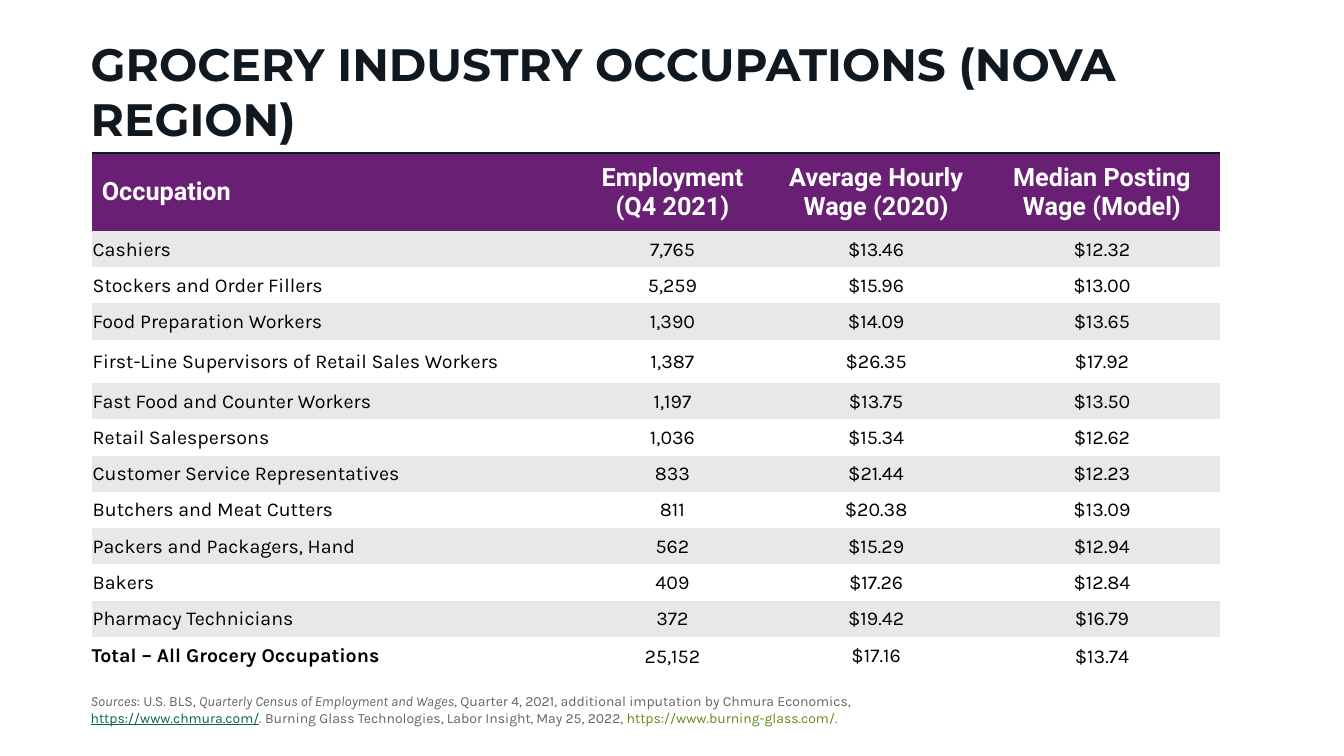
from lxml.etree import SubElement
from pptx import Presentation
from pptx.dml.color import RGBColor
from pptx.enum.text import MSO_ANCHOR, MSO_AUTO_SIZE, PP_ALIGN
from pptx.oxml.ns import qn
from pptx.util import Inches, Pt

NAVY = RGBColor(0x10, 0x18, 0x20)
PURPLE = RGBColor(0x69, 0x1F, 0x74)
BAND_GRAY = RGBColor(0xE7, 0xE8, 0xE8)
WHITE = RGBColor(0xFF, 0xFF, 0xFF)
BLACK = RGBColor(0x00, 0x00, 0x00)
SOURCE_GRAY = RGBColor(0x64, 0x65, 0x5C)
LINK_GREEN = RGBColor(0x04, 0x69, 0x38)
OLIVE = RGBColor(0x62, 0x8B, 0x1C)
NO_STYLE_NO_GRID = "{2D5ABB26-0587-4C30-8999-92F81FD0307C}"

OCCUPATIONS = [
    ("Occupation", "Employment\n(Q4 2021)", "Average Hourly Wage (2020)", "Median Posting Wage (Model)"),
    ("Cashiers", "7,765", "$13.46", "$12.32"),
    ("Stockers and Order Fillers", "5,259", "$15.96", "$13.00"),
    ("Food Preparation Workers", "1,390", "$14.09", "$13.65"),
    ("First-Line Supervisors of Retail Sales Workers", "1,387", "$26.35", "$17.92"),
    ("Fast Food and Counter Workers", "1,197", "$13.75", "$13.50"),
    ("Retail Salespersons", "1,036", "$15.34", "$12.62"),
    ("Customer Service Representatives", "833", "$21.44", "$12.23"),
    ("Butchers and Meat Cutters", "811", "$20.38", "$13.09"),
    ("Packers and Packagers, Hand", "562", "$15.29", "$12.94"),
    ("Bakers", "409", "$17.26", "$12.84"),
    ("Pharmacy Technicians", "372", "$19.42", "$16.79"),
    ("Total – All Grocery Occupations", "25,152", "$17.16", "$13.74"),
]
COLUMN_WIDTHS = [4.81, 1.9, 2.14, 2.34]
ROW_HEIGHTS = [0.77] + [0.36] * 3 + [0.43] + [0.36] * 7 + [0.38]
SOURCES = [
    ("Sources", {"italic": True}),
    (": U.S. BLS, ", {}),
    ("Quarterly Census of Employment and Wages", {"italic": True}),
    (", Quarter 4, 2021, additional imputation by Chmura Economics, ", {}),
    ("https://www.chmura.com/", {"color": LINK_GREEN, "underline": True}),
    (". Burning Glass Technologies, Labor Insight", {}),
    (", ", {"italic": True}),
    ("May 25, 2022, ", {}),
    ("https://www.burning-glass.com/.", {"color": OLIVE}),
]


def format_font(font, color, **values):
    font.color.rgb = color
    for name, value in values.items():
        setattr(font, name, value)


def add_top_border(cell, color, width):
    """Put the line ahead of the cell's fill, as the schema requires."""
    properties = cell._tc.get_or_add_tcPr()
    border = SubElement(properties, qn("a:lnT"), w=str(width))
    fill = SubElement(border, qn("a:solidFill"))
    SubElement(fill, qn("a:srgbClr"), val=str(color))
    properties.insert(0, border)


presentation = Presentation()
presentation.slide_width = Inches(13.33)
presentation.slide_height = Inches(7.5)
slide = presentation.slides.add_slide(presentation.slide_layouts[5])

# Title
title = slide.shapes.title
title.left, title.top, title.width, title.height = map(Inches, (0.8, 0.79, 10.6, 0.7))
title.text = "GROCERY INDUSTRY OCCUPATIONS (NOVA REGION)"
title.text_frame.word_wrap = True
title.text_frame.auto_size = MSO_AUTO_SIZE.NONE
title.text_frame.vertical_anchor = MSO_ANCHOR.BOTTOM
paragraph = title.text_frame.paragraphs[0]
paragraph.alignment = PP_ALIGN.LEFT
format_font(paragraph.font, NAVY, name="Montserrat", size=Pt(32.4), bold=True)

# Occupation table
table_frame = slide.shapes.add_table(
    len(OCCUPATIONS), len(COLUMN_WIDTHS), Inches(0.91), Inches(1.52),
    Inches(sum(COLUMN_WIDTHS)), Inches(sum(ROW_HEIGHTS)))
table = table_frame.table
table.horz_banding = False
table._tbl.tblPr.find(qn("a:tableStyleId")).text = NO_STYLE_NO_GRID
for column, width in zip(table.columns, COLUMN_WIDTHS):
    column.width = Inches(width)

last_row = len(OCCUPATIONS) - 1
for row_index, (values, height) in enumerate(zip(OCCUPATIONS, ROW_HEIGHTS)):
    table.rows[row_index].height = Inches(height)
    is_header = row_index == 0
    band = BAND_GRAY if row_index % 2 else WHITE
    for column_index, value in enumerate(values):
        cell = table.cell(row_index, column_index)
        cell.text = value
        cell.vertical_anchor = MSO_ANCHOR.MIDDLE
        cell.fill.solid()
        cell.fill.fore_color.rgb = PURPLE if is_header else band
        if is_header:
            add_top_border(cell, NAVY, Pt(2))
        if not (is_header and column_index == 0):
            inset = 0 if row_index == last_row and column_index in (0, 2) else 0.01
            cell.margin_left = cell.margin_right = cell.margin_top = Inches(inset)
            cell.margin_bottom = 0
        for paragraph in cell.text_frame.paragraphs:
            paragraph.alignment = PP_ALIGN.CENTER if column_index else PP_ALIGN.LEFT
            if is_header:
                format_font(paragraph.font, WHITE, name="Roboto", size=Pt(18), bold=True)
            else:
                is_total_label = row_index == last_row and column_index == 0
                format_font(paragraph.font, BLACK, name="Karla", size=Pt(14), bold=is_total_label)

# Sources
sources = slide.shapes.add_textbox(Inches(0.8), Inches(6.82), Inches(9.21), Inches(0.44))
sources.text_frame.word_wrap = True
sources.text_frame.auto_size = MSO_AUTO_SIZE.SHAPE_TO_FIT_TEXT
paragraph = sources.text_frame.paragraphs[0]
for text, style in SOURCES:
    run = paragraph.add_run()
    run.text = text
    format_font(run.font, **{"color": SOURCE_GRAY, "name": "Karla", "size": Pt(10), **style})

presentation.save("out.pptx")
